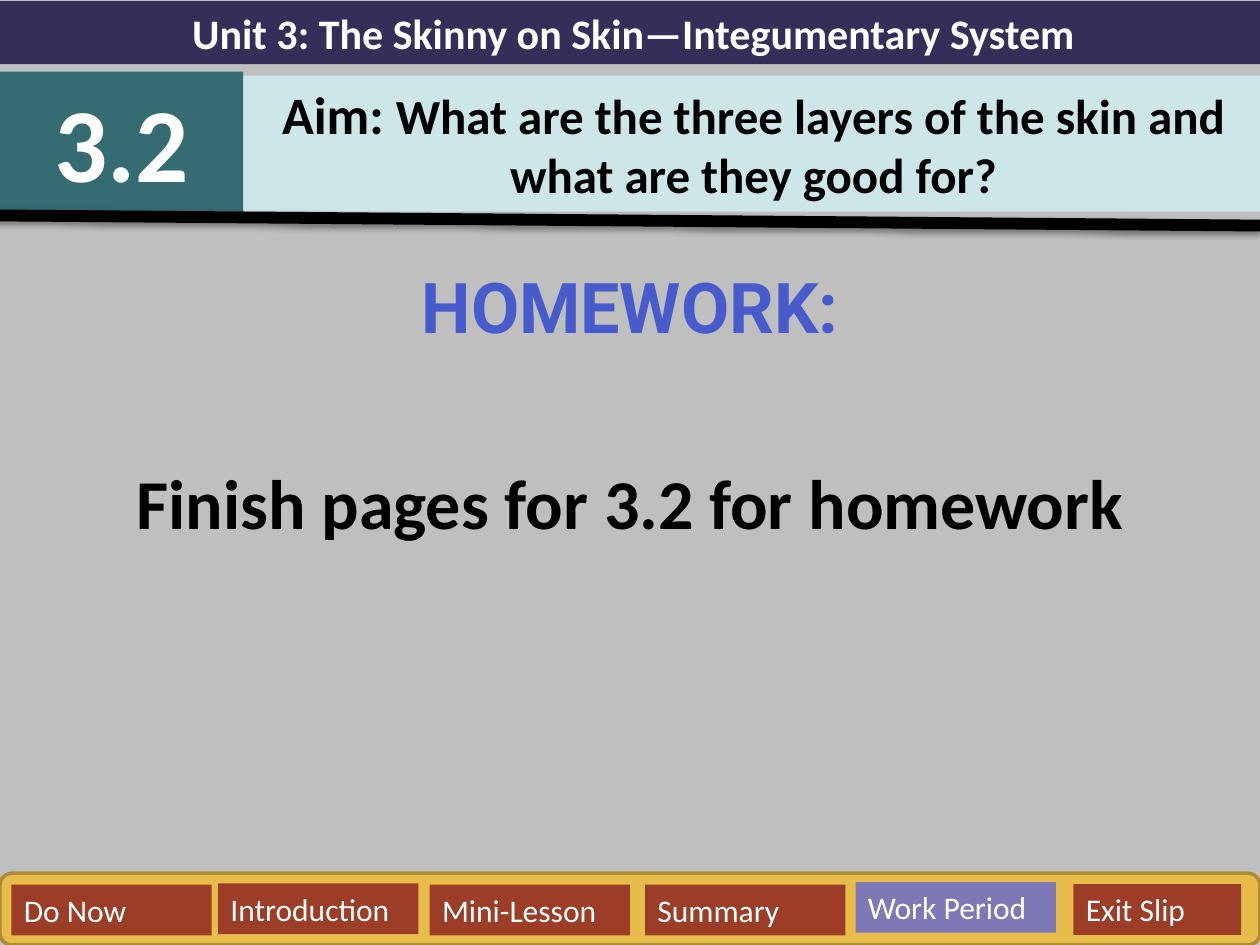
from lxml import etree
from pptx import Presentation
from pptx.dml.color import RGBColor
from pptx.enum.shapes import MSO_CONNECTOR, MSO_SHAPE
from pptx.enum.text import MSO_ANCHOR, PP_ALIGN
from pptx.oxml.ns import qn
from pptx.util import Pt

RECT, ROUNDED = MSO_SHAPE.RECTANGLE, MSO_SHAPE.ROUNDED_RECTANGLE
STRAIGHT = MSO_CONNECTOR.STRAIGHT
TOP = MSO_ANCHOR.TOP
LEFT, CENTER = PP_ALIGN.LEFT, PP_ALIGN.CENTER

WHITE, BLACK, GRAY = "FFFFFF", "000000", "BFBFBF"
NAVY, TEAL, PALE_TEAL = "342F59", "346C71", "CDE6E8"
BLUE, GOLD, DARK_GOLD = "475BCD", "E8BC4A", "AC8B37"
RUST, VIOLET = "9C3D28", "7E78B7"

TITLE = {"size": Pt(24), "bold": True}
NUMBER = {"size": Pt(60), "bold": True}
AIM_LABEL = {"size": Pt(30), "bold": True}
AIM = {"size": Pt(28), "bold": True}
HEADING = {"name": "Roboto", "size": Pt(40), "bold": True}
TASK = {"size": Pt(40), "bold": True}
BUTTON = {"size": Pt(18), "bold": False}


def rgb(value):
    return RGBColor.from_string(value)


def add_run(p, text, color, fmt):
    r = p.add_run()
    r.text = text
    for key, value in {"name": "Calibri", **fmt}.items():
        setattr(r.font, key, value)
    r.font.color.rgb = rgb(color)


def add_block(slide, box, fill, runs=(), color=WHITE, align=CENTER, shape=RECT):
    sp = slide.shapes.add_shape(shape, *map(Pt, box))
    sp.shadow.inherit = False
    sp.fill.solid()
    sp.fill.fore_color.rgb = rgb(fill)
    sp.line.fill.background()
    tf = sp.text_frame
    tf.word_wrap = True
    tf.vertical_anchor = TOP
    p = tf.paragraphs[0]
    p.alignment = align
    for text, fmt in runs:
        add_run(p, text, color, fmt)
    return sp


def add_rule(slide, x1, y1, x2, y2):
    line = slide.shapes.add_connector(STRAIGHT, *map(Pt, (x1, y1, x2, y2)))
    line.line.color.rgb = rgb(BLACK)
    line.line.width = Pt(6.75)
    effects = etree.SubElement(line._element.spPr, qn("a:effectLst"))
    shadow = etree.SubElement(effects, qn("a:outerShdw"), blurRad="40000",
                              dist="20000", dir="5400000", rotWithShape="0")
    color = etree.SubElement(shadow, qn("a:srgbClr"), val=BLACK)
    etree.SubElement(color, qn("a:alpha"), val="38000")


def add_header(slide, x, y, w, h):
    number_w, title_h = 139, 36
    add_block(slide, (x, y, w + 4, title_h), NAVY,
              [("Unit 3: The Skinny on Skin—Integumentary System", TITLE)])
    add_block(slide, (x, y + 40.3, number_w, 80), TEAL, [("3.2", NUMBER)])
    add_block(slide, (x + number_w, y + 42.5, w + 2 - number_w, 77.8), PALE_TEAL,
              [("Aim: ", AIM_LABEL),
               ("What are the three layers of the skin and what are they good for?", AIM)],
              BLACK)
    add_rule(slide, x - 3.6, y + h - 5.8, x + w, y + h)


def add_homework(slide, x, y, w, h):
    tf = slide.shapes.add_textbox(*map(Pt, (x, y, w, h))).text_frame
    tf.word_wrap = True
    heading, task = tf.paragraphs[0], tf.add_paragraph()
    heading.alignment = task.alignment = CENTER
    task.space_before = Pt(64)
    add_run(heading, "HOMEWORK:", BLUE, HEADING)
    add_run(task, "Finish pages for 3.2 for homework", BLACK, TASK)


def add_navigation(slide, x, y, w, h):
    bar = add_block(slide, (x, y, w, h), GOLD, shape=ROUNDED)
    bar.line.color.rgb = rgb(DARK_GOLD)
    bar.line.width = Pt(2)
    buttons = [
        ("Do Now", 6.5, 6.5, 114.5, RUST),
        ("Introduction", 124.6, 5.8, 114.5, RUST),
        ("Mini-Lesson", 245.5, 6.5, 114.5, RUST),
        ("Summary", 368.6, 6.5, 114.5, RUST),
        ("Work Period", 488.9, 5, 114.5, VIOLET),
        ("Exit Slip", 613.4, 6.2, 95.8, RUST),
    ]
    for label, dx, dy, width, fill in buttons:
        add_block(slide, (x + dx, y + dy, width, 29), fill, [(label, BUTTON)], align=LEFT)


def main():
    prs = Presentation()
    prs.slide_width, prs.slide_height = Pt(720), Pt(540)
    s = prs.slides.add_slide(prs.slide_layouts[6])
    s.background.fill.solid()
    s.background.fill.fore_color.rgb = rgb(GRAY)
    add_homework(s, 0, 147, 720, 393)
    add_header(s, 0, 0.7, 720, 128.2)
    add_navigation(s, 0, 499, 720, 41)
    prs.save("out.pptx")


if __name__ == "__main__":
    main()
